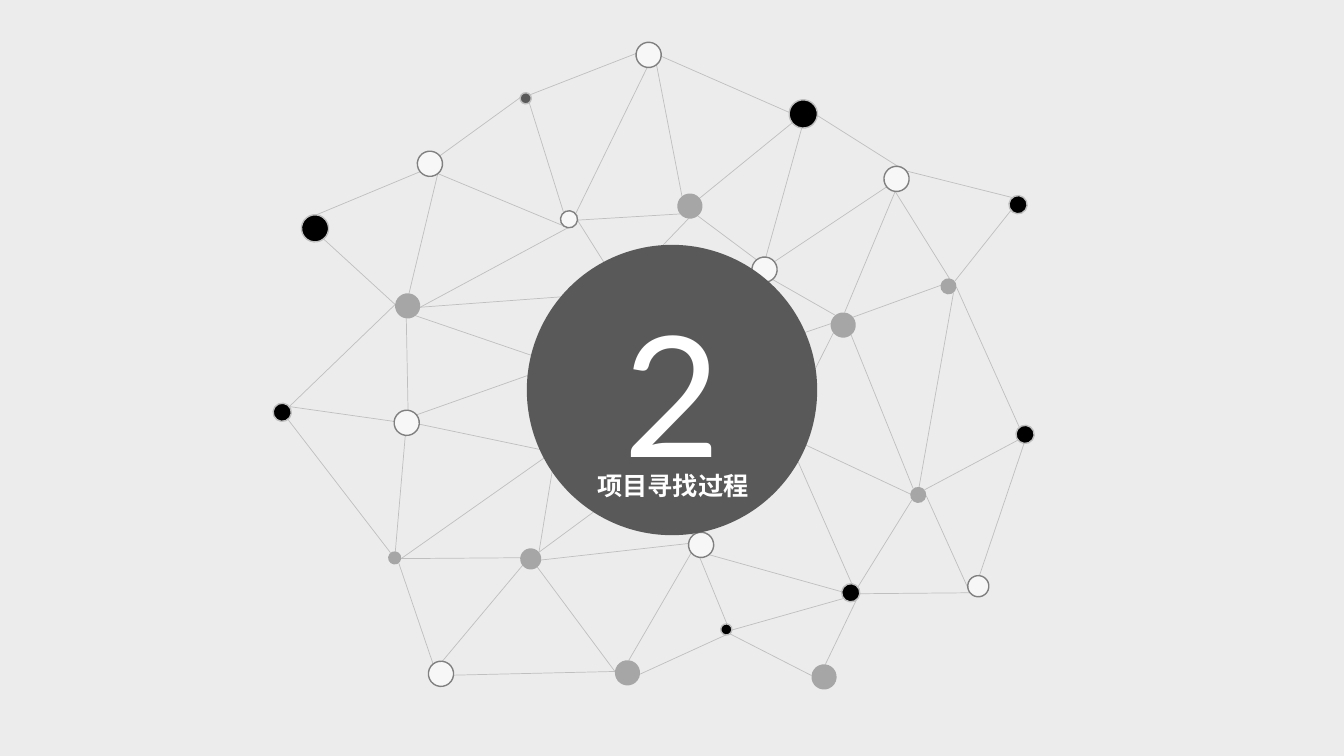
import math

import pptx
import pptx.dml.color
import pptx.enum.shapes
import pptx.enum.text
import pptx.util
from lxml import etree

SECTION_NUMBER = "2"
SECTION_TITLE = "项目寻找过程"

# style: {node: (centre x, centre y, diameter)}
NODES = {
    "black": {
        "A": (201.6, 294.5, 13), "C": (560.5, 314.3, 19.4), "F": (447.8, 347.8, 13),
        "H": (389.9, 259.6, 8), "O": (732.2, 310.3, 13), "P": (225, 163.1, 19.4),
        "R": (573.8, 81.4, 20.2), "U": (443.5, 205.2, 13), "c": (727.2, 146.2, 13),
        "e": (607.7, 423.4, 13), "f": (518.8, 449.6, 8),
    },
    "dark": {"W": (375.5, 70.2, 8)},
    "white": {
        "B": (290.5, 302, 18), "E": (500.8, 389.2, 18), "I": (400.7, 323.6, 12.2),
        "K": (463.3, 39.2, 18), "M": (698.8, 418.7, 15.1), "Q": (307.1, 117, 18),
        "T": (546.1, 192.6, 18), "V": (640.4, 127.8, 18), "X": (406.4, 156.6, 12.2),
        "Z": (315, 481.3, 18),
    },
    "grey": {
        "D": (379.1, 399.2, 15.1), "G": (281.9, 398.5, 9.4), "J": (490, 262.4, 18),
        "L": (655.9, 353.5, 11.5), "N": (492.8, 147.2, 18), "S": (602.3, 232.2, 18),
        "Y": (291.2, 218.5, 18), "a": (677.5, 204.5, 11.5), "b": (588.6, 483.5, 18),
        "d": (448.2, 480.6, 18),
    },
}

# Each end is a node and one of eight sites on its rim, clockwise from the right.
LINKS = """
A1-G5 G6-B2 B7-H1 D7-I3 I0-F4 C3-F7 J4-I7 C4-J0 C2-E6 L5-S1 G0-D4 F3-D7 H7-J4
H1-I5 J7-T3 a1-L6 O2-M6 M3-L0 P1-Y4 Q7-W4 S5-T1 X0-U5 K2-X7 R4-K0 R2-T6 V6-R0
P6-Q3 U0-J6 K4-W7 W1-X5 V7-c5 a7-c3 V2-a6 O3-L7 Z0-d4 Z6-D3 Z5-G1 C1-e6 C0-L4
L3-e7 M3-e0 b6-e1 F1-E5 D0-E4 f6-E2 f0-e3 E1-e4 d4-D1 B0-I4 A7-B4 Y2-B6 Y1-H5
Q1-Y6 Q1-X2 A7-Y4 Y0-X2 Y0-U3 H7-U2 R3-N7 K1-N5 X0-N3 U0-T4 U7-N2 T5-N1 V3-T7
a4-S7 V2-S6 S3-C6 J0-S4 d6-E3 d0-f2 f1-b4 I4-G0 a0-O5
""".split()

THEME = {
    "background": "ECECEC",
    "link": "BFBFBF",
    "disc": "595959",
    "text": "FFFFFF",
    "nodes": {  # fill, outline
        "black": ("000000", "BFBFBF"),
        "dark": ("595959", "BFBFBF"),
        "white": ("F7F7F7", "808080"),
        "grey": ("A6A6A6", None),
    },
    "number": {"font": "Lato", "size": 120},
    "title": {"font": "Arial", "size": 18, "bold": True},
}

SLIDE_SIZE = (960, 540)
DISC = (480, 278.6, 207.4)
TITLE_BOX = (400.6, 332.6, 160, 51.1)
NODE_TILT = 186.2
SITE_STEP = 45

Pt = pptx.util.Pt


def color(value):
    return pptx.dml.color.RGBColor.from_string(value)


def write_text(shape, text, *, font, size, anchor, bold=False):
    frame = shape.text_frame
    frame.word_wrap = True
    frame.auto_size = pptx.enum.text.MSO_AUTO_SIZE.NONE
    frame.vertical_anchor = anchor
    paragraph = frame.paragraphs[0]
    paragraph.alignment = pptx.enum.text.PP_ALIGN.CENTER
    run = paragraph.add_run()
    run.text = text
    run.font.name = font
    run.font.size = Pt(size)
    run.font.bold = bold
    run.font.color.rgb = color(THEME["text"])


def add_circle(slide, center_x, center_y, diameter, fill, outline=None):
    radius = diameter / 2
    shape = slide.shapes.add_shape(
        pptx.enum.shapes.MSO_SHAPE.OVAL,
        Pt(center_x - radius), Pt(center_y - radius), Pt(diameter), Pt(diameter))
    shape.shadow.inherit = False
    shape.fill.solid()
    shape.fill.fore_color.rgb = color(fill)
    if outline:
        shape.line.color.rgb = color(outline)
        shape.line.width = Pt(1)
    else:
        shape.line.fill.background()
    return shape


def rim_point(end, circles):
    """Return the point for an end such as "A1": node A, site 1."""
    center_x, center_y, diameter = circles[end[0]]
    angle = math.radians(NODE_TILT - 180 + SITE_STEP * int(end[1]))
    return (Pt(center_x + diameter / 2 * math.cos(angle)),
            Pt(center_y + diameter / 2 * math.sin(angle)))


def add_link(slide, start, end):
    connector = slide.shapes.add_connector(
        pptx.enum.shapes.MSO_CONNECTOR.STRAIGHT, *start, *end)
    connector.line.color.rgb = color(THEME["link"])
    connector.line.width = Pt(0.5)
    etree.SubElement(connector._element.spPr, pptx.oxml.ns.qn("a:effectLst"))


def add_network(slide):
    circles = {name: circle for group in NODES.values() for name, circle in group.items()}
    for link in LINKS:
        start, end = link.split("-")
        add_link(slide, rim_point(start, circles), rim_point(end, circles))
    for style, group in NODES.items():
        for circle in group.values():
            node = add_circle(slide, *circle, *THEME["nodes"][style])
            node.rotation = NODE_TILT


def add_section_label(slide):
    anchor = pptx.enum.text.MSO_ANCHOR
    disc = add_circle(slide, *DISC, THEME["disc"])
    write_text(disc, SECTION_NUMBER, **THEME["number"], anchor=anchor.MIDDLE)

    title = slide.shapes.title
    title.left, title.top, title.width, title.height = map(Pt, TITLE_BOX)
    write_text(title, SECTION_TITLE, **THEME["title"], anchor=anchor.TOP)
    slide.shapes._spTree.append(title._element)  # bring in front of the disc


def main():
    presentation = pptx.Presentation()
    presentation.slide_width, presentation.slide_height = map(Pt, SLIDE_SIZE)
    slide = presentation.slides.add_slide(presentation.slide_layouts.get_by_name("Title Only"))
    slide.background.fill.solid()
    slide.background.fill.fore_color.rgb = color(THEME["background"])
    add_network(slide)
    add_section_label(slide)
    presentation.save("out.pptx")


if __name__ == "__main__":
    main()
